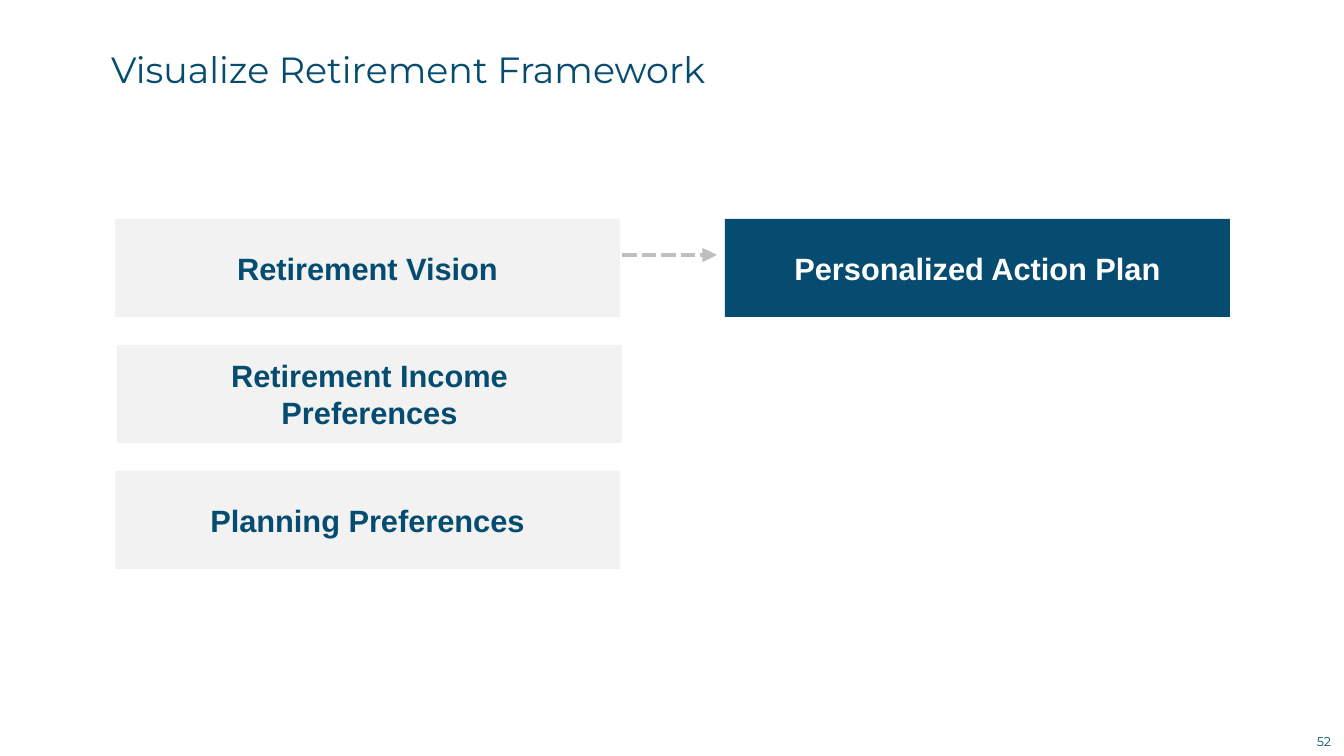
from pptx import Presentation
from pptx.dml.color import RGBColor
from pptx.enum.dml import MSO_LINE
from pptx.enum.shapes import MSO_CONNECTOR, MSO_SHAPE
from pptx.enum.text import MSO_ANCHOR, MSO_AUTO_SIZE, PP_ALIGN
from pptx.oxml.ns import qn
from pptx.util import Pt
from lxml.etree import SubElement

PX = 12192000 / 1344
COLORS = {"navy": "054C70", "gray": "F2F2F2", "arrow": "BFBFBF", "white": "FFFFFF"}
BOX_WIDTH, BOX_HEIGHT = 505, 98
FIRST_TOP, ROW_STEP = 219, 126


def px(*lengths):
    return [round(length * PX) for length in lengths]


def write(shape, text, font_name, size, color, alignment, bold=False):
    frame = shape.text_frame
    frame.word_wrap = True
    frame.auto_size = MSO_AUTO_SIZE.NONE
    frame.vertical_anchor = MSO_ANCHOR.MIDDLE
    paragraph = frame.paragraphs[0]
    paragraph.text = text
    paragraph.alignment = alignment
    paragraph.font.name = font_name
    paragraph.font.size = Pt(size)
    paragraph.font.bold = bold
    paragraph.font.color.rgb = RGBColor.from_string(COLORS[color])
    return frame


presentation = Presentation()
presentation.slide_width, presentation.slide_height = px(1344, 756)
slide = presentation.slides.add_slide(presentation.slide_layouts[5])

title = slide.shapes.title
title.left, title.top, title.width, title.height = px(101, 28, 1159, 82)
write(title, "Visualize Retirement Framework", "Montserrat", 26, "navy", PP_ALIGN.LEFT)

page_number = slide.shapes.add_textbox(*px(1307, 729, 34, 25))
frame = write(page_number, "52", "Montserrat", 9, "navy", PP_ALIGN.CENTER)
frame.margin_left = frame.margin_right = frame.margin_top = frame.margin_bottom = 0

arrow = slide.shapes.add_connector(MSO_CONNECTOR.STRAIGHT, *px(622, 255, 717, 255))
arrow.line.color.rgb = RGBColor.from_string(COLORS["arrow"])
arrow.line.width = Pt(3.5)
arrow.line.dash_style = MSO_LINE.SQUARE_DOT
SubElement(arrow.line._get_or_add_ln(), qn("a:tailEnd"), type="triangle")
SubElement(arrow._element.spPr, qn("a:effectLst"))

boxes = [
    ("Personalized Action Plan", 725, 0, "navy", "white"),
    ("Retirement Vision", 115, 0, "gray", "navy"),
    ("Retirement Income\vPreferences", 117, 1, "gray", "navy"),
    ("Planning Preferences", 115, 2, "gray", "navy"),
]
for text, left, row, fill, color in boxes:
    box = slide.shapes.add_shape(
        MSO_SHAPE.RECTANGLE, *px(left, FIRST_TOP + row * ROW_STEP, BOX_WIDTH, BOX_HEIGHT)
    )
    box.shadow.inherit = False
    box.fill.solid()
    box.fill.fore_color.rgb = RGBColor.from_string(COLORS[fill])
    box.line.fill.background()
    frame = write(box, text, "Arial", 22, color, PP_ALIGN.CENTER, bold=True)
    frame.margin_top, frame.margin_bottom = px(10, 10)

presentation.save("out.pptx")
